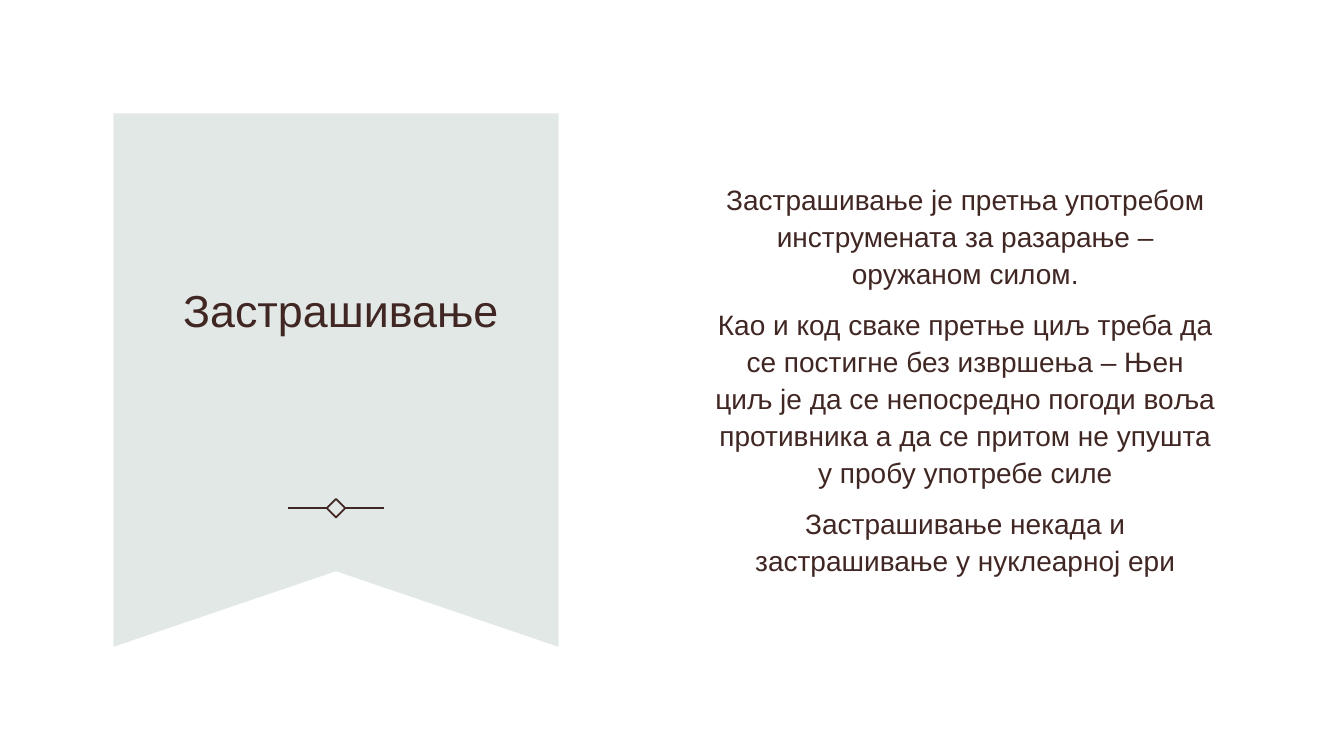
from dataclasses import dataclass

from lxml import etree
from pptx import Presentation
from pptx.dml.color import RGBColor
from pptx.enum.shapes import MSO_CONNECTOR, MSO_SHAPE
from pptx.enum.text import MSO_ANCHOR, PP_ALIGN
from pptx.oxml.ns import qn
from pptx.util import Pt

DIAMOND = MSO_SHAPE.DIAMOND
STRAIGHT = MSO_CONNECTOR.STRAIGHT
MIDDLE = MSO_ANCHOR.MIDDLE
CENTER = PP_ALIGN.CENTER


@dataclass(frozen=True)
class Theme:
    ink: RGBColor = RGBColor.from_string("412724")
    banner: RGBColor = RGBColor.from_string("E2E8E6")
    font: str = "Arial"
    title_size: float = 32
    body_size: float = 20
    line_width: float = 1.25


THEME = Theme()

TITLE = "Застрашивање"
BODY = [
    "Застрашивање је претња употребом инструмената за разарање – оружаном силом.",
    "Као и код сваке претње циљ треба да се постигне без извршења – Њен циљ је "
    "да се непосредно погоди воља противника а да се притом не упушта у пробу "
    "употребе силе",
    "Застрашивање некада и застрашивање у нуклеарној ери",
]


def add_banner(page, left, top, width, height, notch):
    """Draw a hanging ribbon whose lower edge is notched upwards."""
    right, bottom = left + width, top + height
    builder = page.shapes.build_freeform(Pt(left), Pt(top))
    corners = [(right, top), (right, bottom),
               (left + width / 2, bottom - notch), (left, bottom)]
    builder.add_line_segments([(Pt(x), Pt(y)) for x, y in corners])
    banner = builder.convert_to_shape()
    banner.shadow.inherit = False
    banner.fill.solid()
    banner.fill.fore_color.rgb = THEME.banner
    banner.line.fill.background()


def style_line(line):
    line.color.rgb = THEME.ink
    line.width = Pt(THEME.line_width)


def add_ornament(page, center_x, center_y, diamond_size, gap, reach):
    """Draw a hollow diamond with a rule on either side of it."""
    half = diamond_size / 2
    diamond = page.shapes.add_shape(
        DIAMOND, Pt(center_x - half), Pt(center_y - half),
        Pt(diamond_size), Pt(diamond_size))
    diamond.shadow.inherit = False
    diamond.fill.background()
    style_line(diamond.line)
    for side in (-1, 1):
        rule = page.shapes.add_connector(
            STRAIGHT, Pt(center_x + side * gap), Pt(center_y),
            Pt(center_x + side * reach), Pt(center_y))
        style_line(rule.line)
        etree.SubElement(rule.element.spPr, qn("a:effectLst"))


def add_text(page, left, top, width, height, texts, size, space_before=0):
    box = page.shapes.add_textbox(Pt(left), Pt(top), Pt(width), Pt(height))
    frame = box.text_frame
    frame.word_wrap = True
    frame.vertical_anchor = MIDDLE
    frame.text = "\n".join(texts)
    for para in frame.paragraphs:
        para.alignment = CENTER
        para.line_spacing = 1.1
        para.space_before = Pt(space_before)
        para.font.name = THEME.font
        para.font.size = Pt(size)
        para.font.color.rgb = THEME.ink


def main():
    deck = Presentation()
    deck.slide_width, deck.slide_height = Pt(960), Pt(540)
    page = deck.slides.add_slide(deck.slide_layouts[6])
    add_banner(page, 81, 81, 318, 381, notch=54)
    add_ornament(page, 240, 363, diamond_size=13.2, gap=6.5, reach=34.3)
    add_text(page, 111, 106.5, 265, 226, [TITLE], THEME.title_size)
    add_text(page, 503, 57, 373, 426, BODY, THEME.body_size, space_before=10)
    deck.save("out.pptx")


if __name__ == "__main__":
    main()
